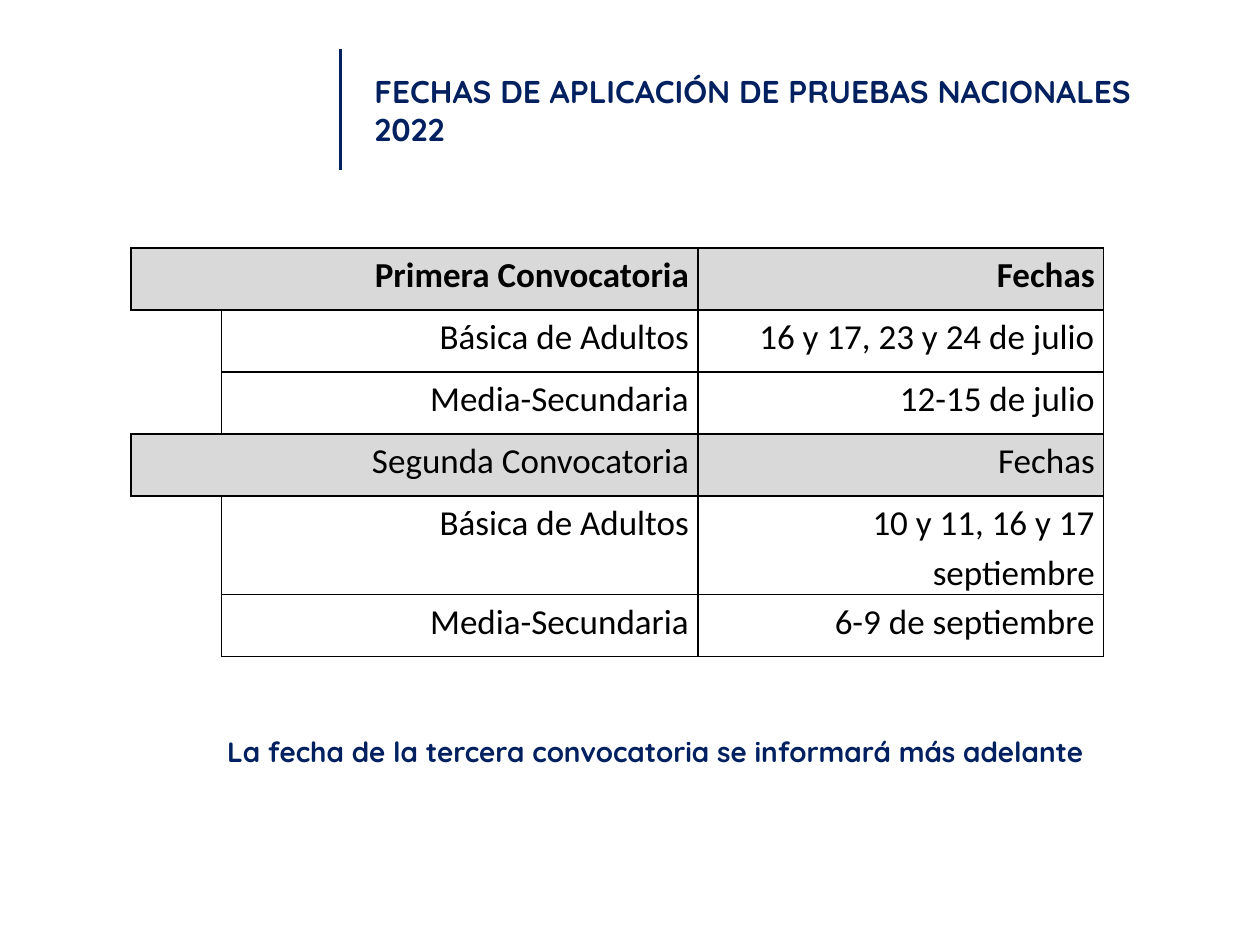
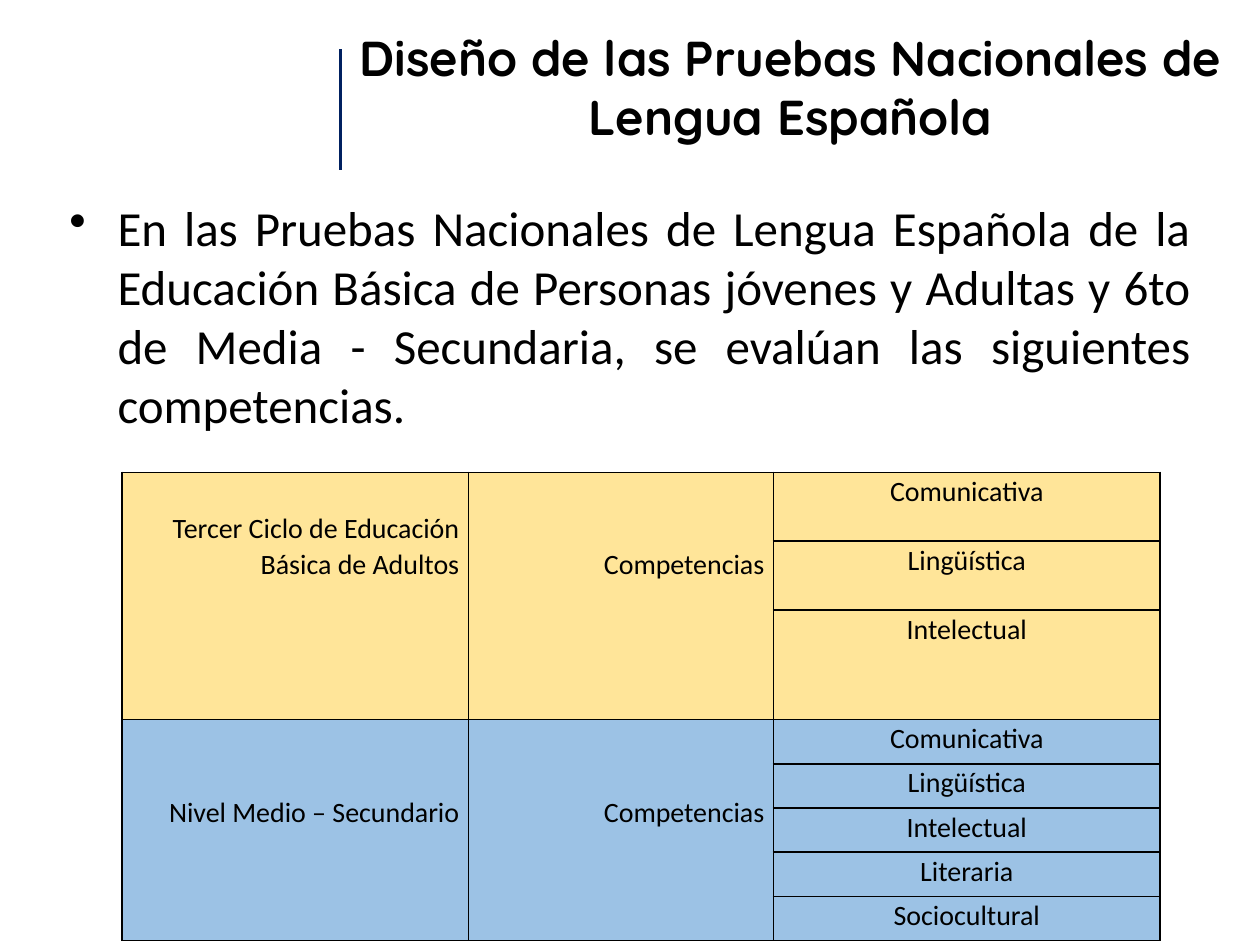
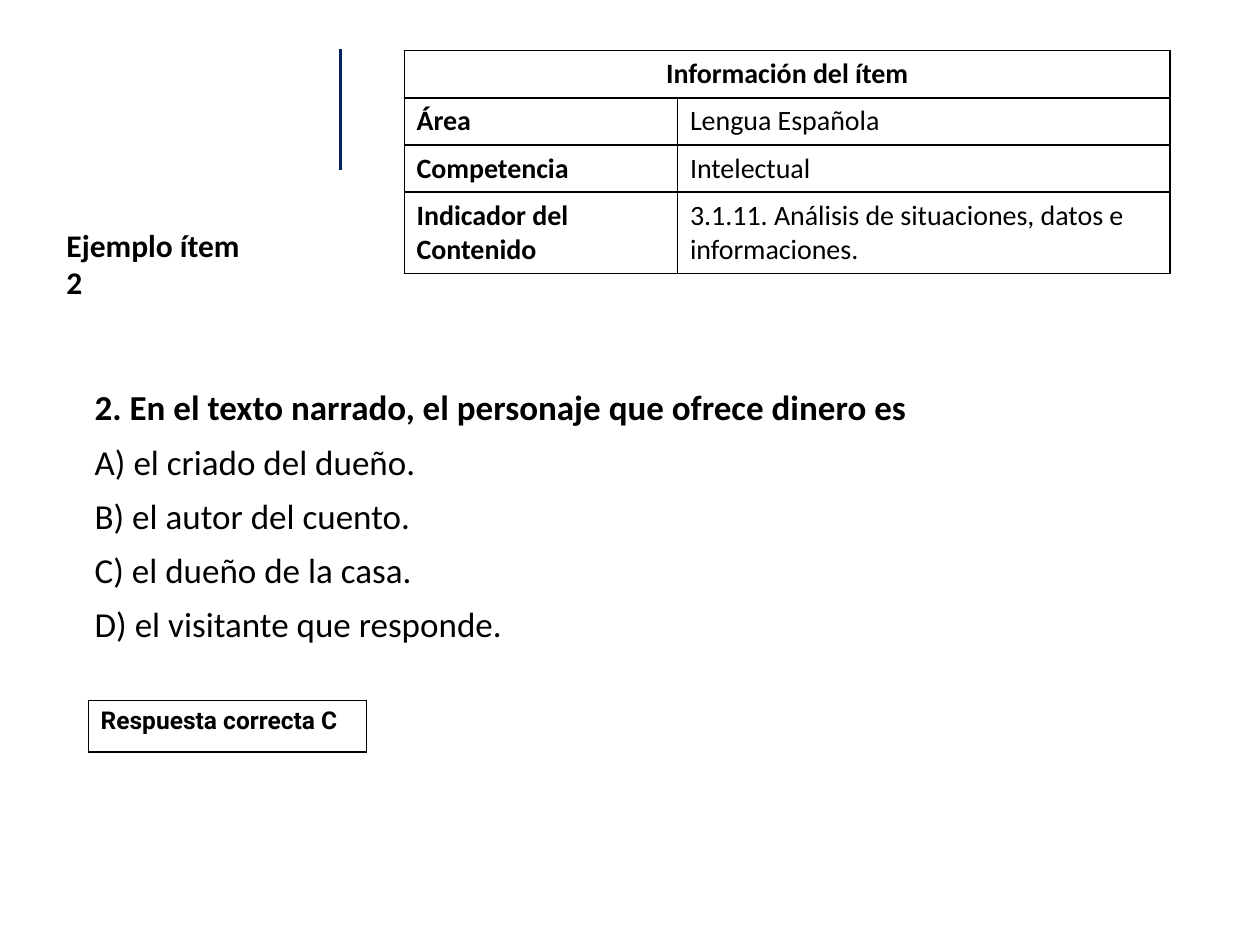
"""Build three slides about the national exams of Spanish language."""
import dataclasses

import lxml.etree
import pptx
import pptx.dml.color
import pptx.enum.shapes
import pptx.enum.text
import pptx.oxml.ns
import pptx.util

Cm = pptx.util.Cm
Pt = pptx.util.Pt
RGBColor = pptx.dml.color.RGBColor
Align = pptx.enum.text.PP_ALIGN
Anchor = pptx.enum.text.MSO_ANCHOR
qualified = pptx.oxml.ns.qn

NAVY = RGBColor(0x00, 0x20, 0x60)
BLACK = RGBColor(0x00, 0x00, 0x00)
GRAY = RGBColor(0xD9, 0xD9, 0xD9)
YELLOW = RGBColor(0xFF, 0xE5, 0x99)
BLUE = RGBColor(0x9C, 0xC2, 0xE5)

ALL_EDGES = "LRTB"
TEXT_INSET = 0.13
NARROW_INSETS = (0.18, 0)
DEFAULT_INSETS = (0.25, 0.13)


@dataclasses.dataclass
class Box:
    """A rectangle in centimetres."""
    left: float
    top: float
    width: float
    height: float

    def lengths(self):
        """Return the four lengths in the order that shapes take them."""
        return Cm(self.left), Cm(self.top), Cm(self.width), Cm(self.height)


@dataclasses.dataclass
class Style:
    """The look of a paragraph."""
    size: float
    bold: bool = False
    font: str = "Calibri"
    color: RGBColor = BLACK
    align: Align = Align.LEFT
    spacing: float = 1.0


def style_paragraph(paragraph, style):
    """Apply a style to a whole paragraph."""
    paragraph.alignment = style.align
    paragraph.line_spacing = style.spacing
    paragraph.font.name = style.font
    paragraph.font.size = Pt(style.size)
    paragraph.font.bold = style.bold
    paragraph.font.color.rgb = style.color


def add_text(slide, box, lines, anchor=Anchor.TOP, insets=(TEXT_INSET, TEXT_INSET), gap=0):
    """Add a text box with one paragraph for each (text, style) pair."""
    frame = slide.shapes.add_textbox(*box.lengths()).text_frame
    frame.word_wrap = True
    frame.vertical_anchor = anchor
    frame.margin_left = frame.margin_right = Cm(insets[0])
    frame.margin_top = frame.margin_bottom = Cm(insets[1])
    for index, (text, style) in enumerate(lines):
        paragraph = frame.add_paragraph() if index else frame.paragraphs[0]
        paragraph.text = text
        style_paragraph(paragraph, style)
        if index:
            paragraph.space_before = Pt(gap)
    return frame


def add_bullet(paragraph, indent):
    """Give a paragraph a hanging round bullet."""
    properties = paragraph._p.get_or_add_pPr()
    properties.set("marL", str(Cm(indent)))
    properties.set("indent", str(-Cm(indent)))
    bullet = lxml.etree.SubElement(properties, qualified("a:buChar"))
    bullet.set("char", "•")


def set_borders(cell, edges):
    """Draw the named edges of a cell in black and hide the others."""
    properties = cell._tc.get_or_add_tcPr()
    for index, edge in enumerate(ALL_EDGES):
        line = lxml.etree.Element(qualified(f"a:ln{edge}"), w=str(Pt(1)))
        if edge in edges:
            fill = lxml.etree.SubElement(line, qualified("a:solidFill"))
            lxml.etree.SubElement(fill, qualified("a:srgbClr"), val=str(BLACK))
        else:
            lxml.etree.SubElement(line, qualified("a:noFill"))
        properties.insert(index, line)


def add_table(slide, box, widths, heights, insets):
    """Add a plain bordered table; sizes are in centimetres."""
    table = slide.shapes.add_table(len(heights), len(widths), *box.lengths()).table
    table.first_row = table.horz_banding = False
    for column, width in zip(table.columns, widths):
        column.width = Cm(width)
    for row, height in zip(table.rows, heights):
        row.height = Cm(height)
    for cell in table.iter_cells():
        cell.margin_left = cell.margin_right = Cm(insets[0])
        cell.margin_top = cell.margin_bottom = Cm(insets[1])
        cell.fill.background()
        set_borders(cell, ALL_EDGES)
    return table


def write_cell(cell, text, style, fill=None):
    """Write one paragraph in a cell and colour the cell."""
    paragraph = cell.text_frame.paragraphs[0]
    paragraph.text = text
    style_paragraph(paragraph, style)
    if fill is not None:
        cell.fill.solid()
        cell.fill.fore_color.rgb = fill


def add_header_rule(slide, box):
    """Draw the navy rule along the left side of the header box."""
    rule = slide.shapes.add_connector(
        pptx.enum.shapes.MSO_CONNECTOR.STRAIGHT,
        Cm(box.left), Cm(box.top), Cm(box.left), Cm(box.top + box.height))
    rule.line.color.rgb = NAVY
    rule.line.width = Pt(2)
    lxml.etree.SubElement(rule._element.spPr, qualified("a:effectLst"))


def add_slide(presentation):
    """Add a blank slide with the shared header rule."""
    slide = presentation.slides.add_slide(presentation.slide_layouts[6])
    add_header_rule(slide, Box(6.86, 0.99, 17.28, 2.44))
    return slide


def add_dates_table(slide, box):
    """Add the table of exam dates, one group of rows for each call."""
    calls = [
        ("Primera Convocatoria", True,
         [("Básica de Adultos", "16 y 17, 23 y 24 de julio"),
          ("Media-Secundaria", "12-15 de julio")]),
        ("Segunda Convocatoria", False,
         [("Básica de Adultos", "10 y 11, 16 y 17 septiembre"),
          ("Media-Secundaria", "6-9 de septiembre")]),
    ]
    indent, level_width = 1.83, 9.6
    widths = [indent, level_width, box.width - indent - level_width]
    table = add_table(slide, box, widths, [1.25, 1.25, 1.25, 1.25, 1.98, 1.25], NARROW_INSETS)
    row = 0
    for name, bold, exams in calls:
        heading = Style(20, bold, align=Align.RIGHT, spacing=1.15)
        table.cell(row, 0).merge(table.cell(row, 1))
        write_cell(table.cell(row, 0), name, heading, GRAY)
        write_cell(table.cell(row, 2), "Fechas", heading, GRAY)
        for exam_row, exam in enumerate(exams, row + 1):
            margin_cell = table.cell(exam_row, 0)
            for edge in ALL_EDGES:
                properties = margin_cell._tc.tcPr
                properties.remove(properties.find(qualified(f"a:ln{edge}")))
            follows_heading = exam_row == row + 1
            precedes_heading = exam_row == row + len(exams) and name != calls[-1][0]
            set_borders(margin_cell, "R" + "T" * follows_heading + "B" * precedes_heading)
            for column, text in enumerate(exam, 1):
                write_cell(table.cell(exam_row, column), text,
                           Style(20, align=Align.RIGHT, spacing=1.15))
        row += 1 + len(exams)


def add_competences_table(slide, box):
    """Add the table of competences, one colour for each level."""
    line_height = 0.74
    levels = [
        ("Tercer Ciclo de Educación Básica de Adultos", 1, YELLOW,
         ["Comunicativa", "Lingüística", "Intelectual"]),
        ("Nivel Medio – Secundario", 2, BLUE,
         ["Comunicativa", "Lingüística", "Intelectual", "Literaria", "Sociocultural"]),
    ]
    level_width, label_width = 6.98, 6.15
    widths = [level_width, label_width, box.width - level_width - label_width]
    table = add_table(slide, box, widths, [1.39, 1.39, 2.21] + [0.89] * 5, NARROW_INSETS)
    side = Style(16, align=Align.RIGHT, spacing=1.07)
    middle = Style(16, align=Align.CENTER, spacing=1.07)
    row = 0
    for name, lines_above, color, competences in levels:
        labels = [(name, lines_above), ("Competencias", 2)]
        for column, (label, offset) in enumerate(labels):
            cell = table.cell(row, column)
            cell.merge(table.cell(row + len(competences) - 1, column))
            cell.margin_top = Cm(offset * line_height)
            write_cell(cell, label, side, color)
        for competence in competences:
            write_cell(table.cell(row, 2), competence, middle, color)
            row += 1


def add_item_table(slide, box):
    """Add the table that describes the exam item."""
    facts = [
        ("Área", "Lengua Española"),
        ("Competencia", "Intelectual"),
        ("Indicador del Contenido", "3.1.11. Análisis de situaciones, datos e informaciones."),
    ]
    label_width = 5.51
    table = add_table(slide, box, [label_width, box.width - label_width],
                      [0.94, 0.94, 0.94, 1.62], DEFAULT_INSETS)
    table.cell(0, 0).merge(table.cell(0, 1))
    write_cell(table.cell(0, 0), "Información del ítem", Style(16, True, align=Align.CENTER))
    for row, (label, value) in enumerate(facts, 1):
        write_cell(table.cell(row, 0), label, Style(16, True))
        write_cell(table.cell(row, 1), value, Style(16))


def add_question(slide, box):
    """Add the question and its lettered options."""
    options = ["A) el criado del dueño.", "B) el autor del cuento.",
               "C) el dueño de la casa.", "D) el visitante que responde."]
    question = ("2. En el texto narrado, el personaje que ofrece dinero es", Style(20, True))
    add_text(slide, box, [question] + [(option, Style(20)) for option in options], gap=7)


def add_answer(slide, box):
    """Add the framed correct answer."""
    table = add_table(slide, box, [box.width], [box.height], DEFAULT_INSETS)
    write_cell(table.cell(0, 0), "Respuesta correcta C", Style(14, True, "Roboto"))


def build_dates_slide(presentation):
    """Build the slide with the exam dates."""
    slide = add_slide(presentation)
    add_text(slide, Box(7.42, 0.99, 16.71, 2.44),
             [("FECHAS DE APLICACIÓN DE PRUEBAS NACIONALES 2022",
               Style(18, True, "Quicksand", NAVY))], Anchor.MIDDLE)
    add_dates_table(slide, Box(2.64, 5, 19.61, 8.23))
    add_text(slide, Box(4.45, 13.92, 18.24, 2.44),
             [("La fecha de la tercera convocatoria se informará más adelante",
               Style(16, True, "Quicksand", NAVY))], Anchor.MIDDLE)


def build_design_slide(presentation):
    """Build the slide with the evaluated competences."""
    slide = add_slide(presentation)
    add_text(slide, Box(7.06, 0.43, 17.75, 3.43),
             [("Diseño de las Pruebas Nacionales de Lengua Española",
               Style(28, True, "Quicksand", align=Align.CENTER))])
    frame = add_text(slide, Box(1.27, 3.86, 22.86, 14.17), [])
    paragraph = frame.paragraphs[0]
    paragraph.text = ("En las Pruebas Nacionales de Lengua Española de la Educación Básica "
                      "de Personas jóvenes y Adultas y 6to de Media - Secundaria, "
                      "se evalúan las siguientes competencias.")
    add_bullet(paragraph, 0.97)
    style_paragraph(paragraph, Style(28, align=Align.JUSTIFY))
    add_competences_table(slide, Box(2.46, 9.52, 20.93, 9.44))


def build_item_slide(presentation):
    """Build the slide with a sample item."""
    slide = add_slide(presentation)
    add_item_table(slide, Box(8.15, 1.02, 15.44, 4.44))
    add_question(slide, Box(1.78, 7.65, 20.73, 9.62))
    add_answer(slide, Box(1.78, 14.12, 5.61, 1.04))
    add_text(slide, Box(1.09, 4.42, 4.32, 1.65),
             [("Ejemplo ítem 2", Style(18, True))], insets=DEFAULT_INSETS)


def main():
    """Build and save the presentation."""
    presentation = pptx.Presentation()
    presentation.slide_width = Cm(25.4)
    presentation.slide_height = Cm(19.05)
    build_dates_slide(presentation)
    build_design_slide(presentation)
    build_item_slide(presentation)
    presentation.save("out.pptx")


if __name__ == "__main__":
    main()
